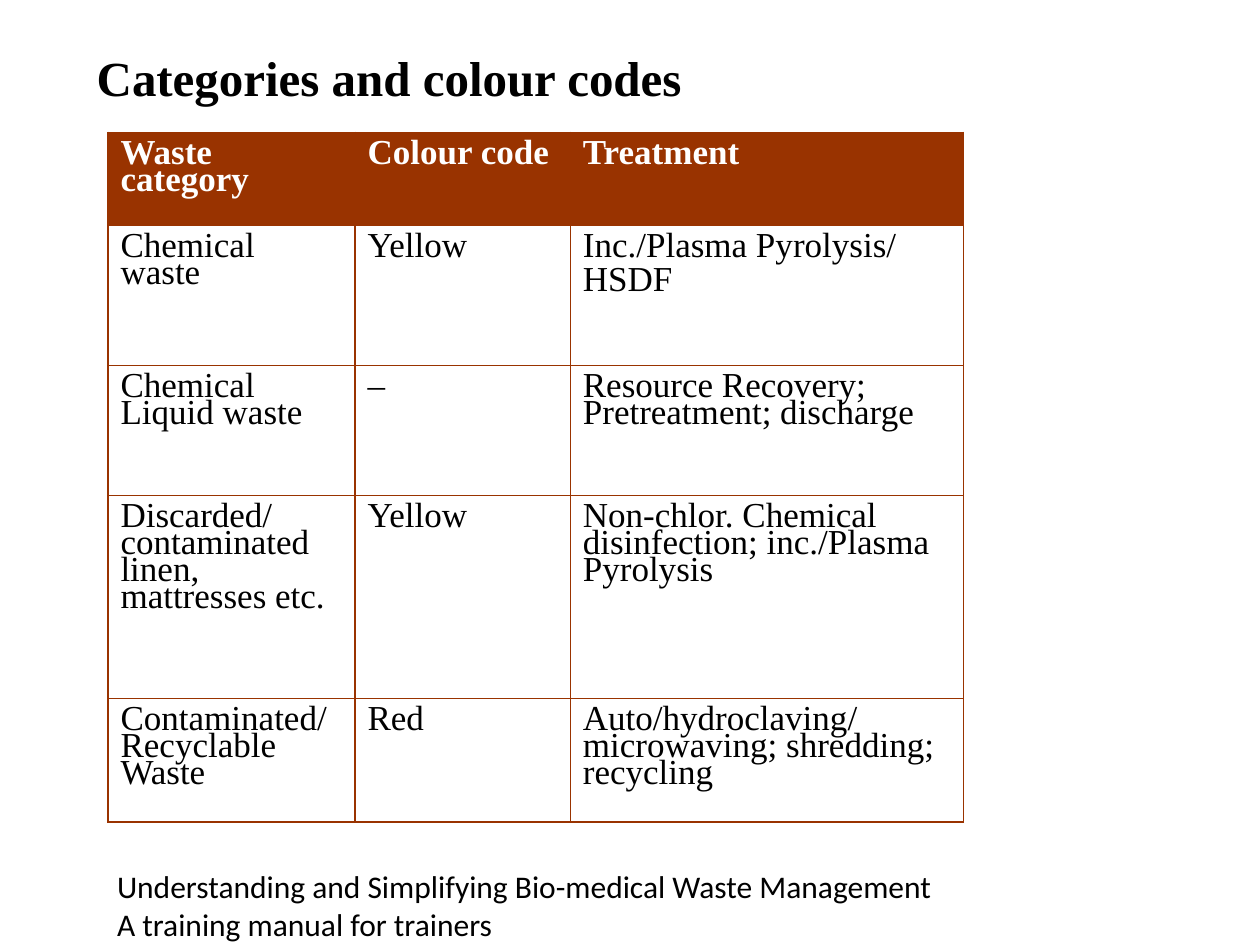
from lxml import etree
from pptx import Presentation
from pptx.dml.color import RGBColor
from pptx.enum import text
from pptx.oxml import ns
from pptx.util import Cm, Pt

RUST = "993300"
SERIF = "Times New Roman"
COLUMN_WIDTHS = [4.98, 4.34, 7.92]
ROW_HEIGHTS = [1.88, 2.82, 2.62, 4.09, 2.49]
WASTE_ROWS = [
    ["Waste\vcategory", "Colour code", "Treatment"],
    ["Chemical waste", "Yellow", "Inc./Plasma Pyrolysis/\nHSDF"],
    ["Chemical Liquid waste", "–", "Resource Recovery; Pretreatment; discharge"],
    ["Discarded/contaminated linen, mattresses etc.", "Yellow",
     "Non-chlor. Chemical disinfection; inc./Plasma Pyrolysis"],
    ["Contaminated/Recyclable Waste", "Red",
     "Auto/hydroclaving/microwaving; shredding; recycling"],
]


def colour(value):
    return RGBColor.from_string(value)


def set_values(target, values):
    for name, value in values.items():
        setattr(target, name, value)


def write(frame, words, font, fill="000000", spacing=None):
    frame.text = words
    for index, para in enumerate(frame.paragraphs):
        if spacing:
            para.line_spacing = spacing
            if index:
                para.space_before = Pt(4)
        for span in para.runs:
            set_values(span.font, font)
            span.font.color.rgb = colour(fill)


def add_text(page, box, words, font, top_inset):
    frame = page.shapes.add_textbox(*map(Cm, box)).text_frame
    set_values(frame, {"word_wrap": True, "auto_size": text.MSO_AUTO_SIZE.NONE,
                       "vertical_anchor": text.MSO_ANCHOR.TOP,
                       "margin_top": Cm(top_inset)})
    write(frame, words, font)


def add_borders(cell):
    properties = cell._tc.get_or_add_tcPr()
    for index, side in enumerate(("lnL", "lnR", "lnT", "lnB")):
        line = etree.Element(ns.qn("a:" + side), w=str(Pt(1)))
        solid = etree.SubElement(line, ns.qn("a:solidFill"))
        etree.SubElement(solid, ns.qn("a:srgbClr"), val=RUST)
        properties.insert(index, line)


def add_waste_table(page, left, top):
    table = page.shapes.add_table(
        len(ROW_HEIGHTS), len(COLUMN_WIDTHS), Cm(left), Cm(top),
        Cm(sum(COLUMN_WIDTHS)), Cm(sum(ROW_HEIGHTS))).table
    table.horz_banding = False
    for column, width in zip(table.columns, COLUMN_WIDTHS):
        column.width = Cm(width)
    for row_index, (row, height) in enumerate(zip(table.rows, ROW_HEIGHTS)):
        row.height = Cm(height)
        header = row_index == 0
        for cell, words in zip(row.cells, WASTE_ROWS[row_index]):
            set_values(cell, {"margin_left": Cm(0.25), "margin_right": Cm(0.25),
                              "margin_top": Cm(0.2), "margin_bottom": Cm(0.2)})
            if header:
                cell.fill.solid()
                cell.fill.fore_color.rgb = colour(RUST)
            else:
                cell.fill.background()
            add_borders(cell)
            write(cell.text_frame, words,
                  {"name": SERIF, "size": Pt(20), "bold": header},
                  "FFFFFF" if header else "000000", 0.7)


def main():
    deck = Presentation()
    set_values(deck, {"slide_width": Cm(25.4), "slide_height": Cm(19.05)})
    page = deck.slides.add_slide(deck.slide_layouts[6])
    add_text(page, (2.11, 17.35, 19.74, 1.32),
             "Understanding and Simplifying Bio-medical Waste Management\n"
             "A training manual for trainers",
             {"name": "Calibri", "size": Pt(18)}, 0.13)
    add_text(page, (1.7, 0.71, 18, 3.18), "Categories and colour codes",
             {"name": SERIF, "size": Pt(28), "bold": True}, 0.25)
    add_waste_table(page, 2.18, 2.67)
    deck.save("out.pptx")


if __name__ == "__main__":
    main()
